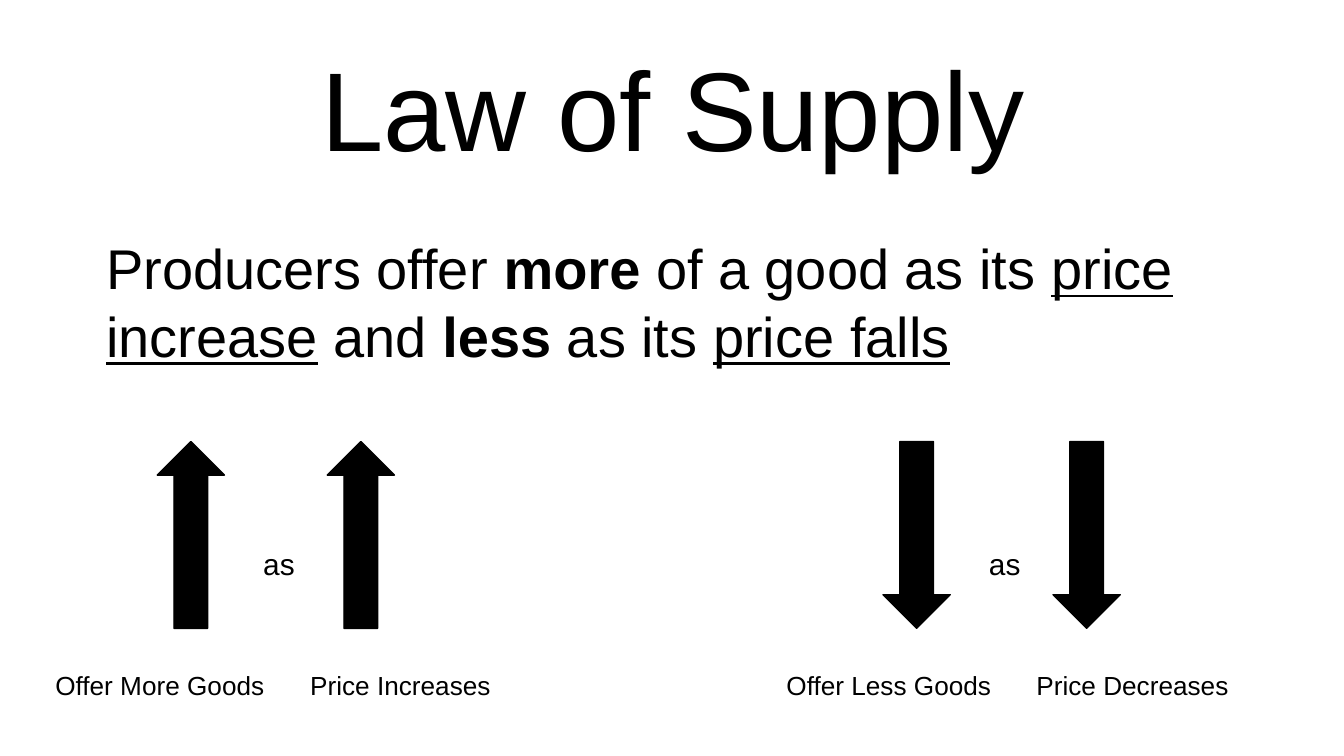
"""Build the Law of Supply slide."""
from dataclasses import dataclass, field
from typing import Any

from lxml import etree
from pptx import Presentation
from pptx.dml.color import RGBColor
from pptx.enum.shapes import MSO_SHAPE
from pptx.enum.text import MSO_ANCHOR, MSO_AUTO_SIZE, PP_ALIGN
from pptx.oxml.ns import qn
from pptx.util import Inches, Pt

UP_ARROW = MSO_SHAPE.UP_ARROW
TOP = MSO_ANCHOR.TOP
LEFT = PP_ALIGN.LEFT
NO_AUTOFIT = MSO_AUTO_SIZE.NONE

COLUMNS, ROWS = 100, 56.25
CELL = 0.1
COLORS = {"ink": "000000", "paper": "FFFFFF"}


def write_text(frame, *runs, size, font="Arial", color="ink", inset=0.1):
    frame.word_wrap = True
    frame.auto_size = NO_AUTOFIT
    frame.vertical_anchor = TOP
    frame.margin_left = frame.margin_right = Inches(inset)
    frame.margin_top = frame.margin_bottom = Inches(inset)
    paragraph = frame.paragraphs[0]
    properties = paragraph._p.get_or_add_pPr()
    properties.set("marL", "0")
    properties.set("indent", "0")
    etree.SubElement(properties, qn("a:buNone"))
    paragraph.alignment = LEFT
    paragraph.space_before = Pt(0)
    for words, emphasis in runs:
        run = paragraph.add_run()
        run.text = words
        run.font.name = font
        run.font.size = Pt(size)
        run.font.color.rgb = RGBColor.from_string(COLORS[color])
        if emphasis:
            setattr(run.font, emphasis, True)


@dataclass
class SupplySlide:
    slide: Any
    label_size: int = 14
    joiner_size: int = 16
    arrow_size: tuple = (5, 13.9)
    colors: dict = field(default_factory=lambda: COLORS)

    def place(self, column, row, width, height):
        return [Inches(CELL * cells) for cells in (column, row, width, height)]

    def placeholder(self, index, area, *runs, size):
        holder = self.slide.placeholders[index]
        holder.left, holder.top, holder.width, holder.height = self.place(*area)
        write_text(holder.text_frame, *runs, size=size)

    def label(self, area, words, size):
        box = self.slide.shapes.add_textbox(*self.place(*area))
        write_text(box.text_frame, (words, None), size=size)

    def arrow(self, column, row, rotation):
        arrow = self.slide.shapes.add_shape(
            UP_ARROW, *self.place(column, row, *self.arrow_size))
        ink = RGBColor.from_string(self.colors["ink"])
        arrow.rotation = rotation
        arrow.shadow.inherit = False
        arrow.fill.solid()
        arrow.fill.fore_color.rgb = ink
        arrow.line.color.rgb = ink
        arrow.line.width = Pt(0.75)

    def relation(self, column, rotation, captions):
        for offset in (0, 12.65):
            self.arrow(column + offset, 32.85, rotation)
        for caption, caption_column, width in captions:
            self.label((caption_column, 48.8, width, 4.4), caption, self.label_size)
        self.label((column + 6.9, 39.6, 5.8, 4.7), "as", self.joiner_size)


def main():
    deck = Presentation()
    deck.slide_width = Inches(COLUMNS * CELL)
    deck.slide_height = Inches(ROWS * CELL)
    slide = deck.slides.add_slide(deck.slide_layouts[1])
    slide.background.fill.solid()
    slide.background.fill.fore_color.rgb = RGBColor.from_string(COLORS["paper"])
    supply = SupplySlide(slide)
    supply.placeholder(0, (22.9, 1.9, 55.1, 12.1), ("Law of Supply", None), size=60)
    supply.placeholder(
        1, (6.9, 16.4, 87, 12.1),
        ("Producers offer ", None), ("more", "bold"),
        (" of a good as its ", None), ("price increase", "underline"),
        (" and ", None), ("less", "bold"),
        (" as its ", None), ("price falls", "underline"),
        size=30)
    supply.relation(11.7, 0, (("Offer More Goods", 3.13, 18.5),
                              ("Price Increases", 22.1, 15.7)))
    supply.relation(65.7, 180, (("Offer Less Goods", 57.53, 17.5),
                                ("Price Decreases", 76.13, 18.5)))
    deck.save("out.pptx")


if __name__ == "__main__":
    main()
